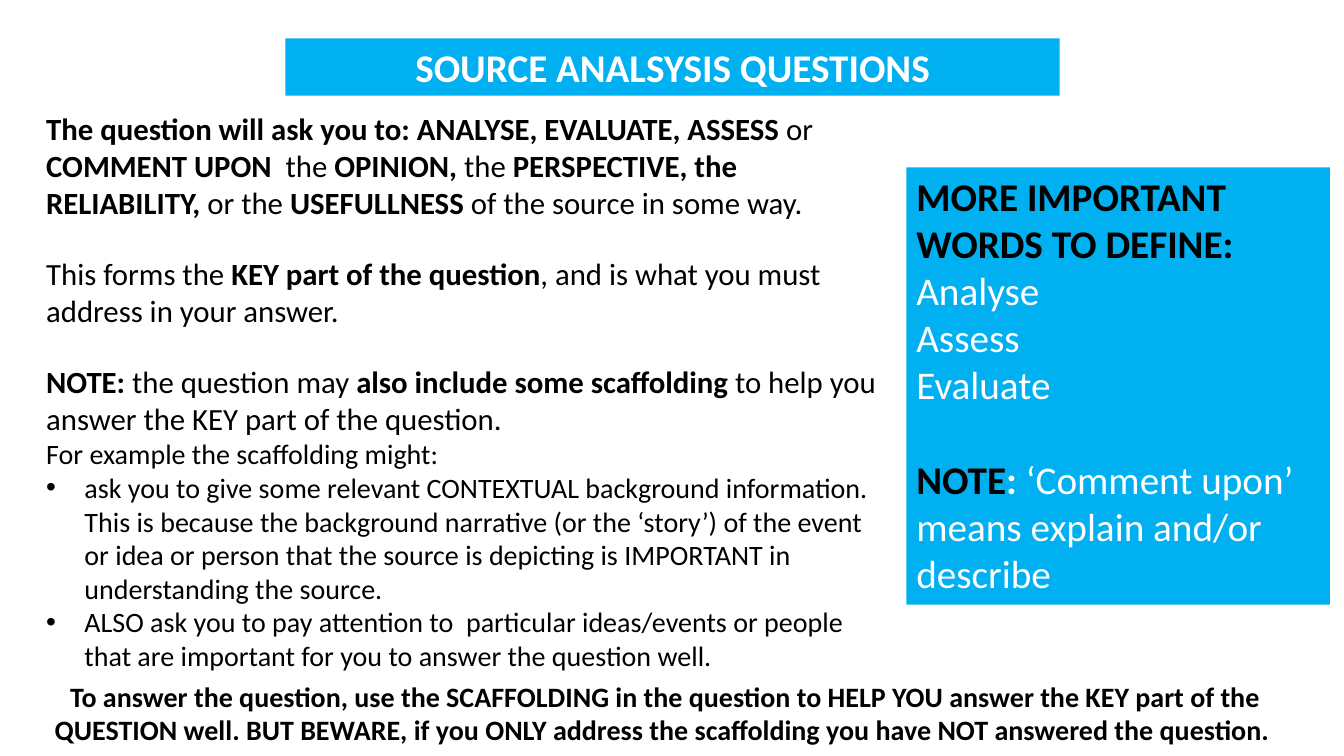
"""Build the slide on source analysis questions."""
from pptx import Presentation
from pptx.dml.color import RGBColor
from pptx.enum.shapes import MSO_SHAPE
from pptx.enum.text import MSO_ANCHOR, MSO_AUTO_SIZE, PP_ALIGN
from pptx.oxml.xmlchemy import OxmlElement
from pptx.util import Inches, Pt

RECTANGLE = MSO_SHAPE.RECTANGLE
TOP, LEFT, CENTER = MSO_ANCHOR.TOP, PP_ALIGN.LEFT, PP_ALIGN.CENTER
NO_AUTOFIT = MSO_AUTO_SIZE.NONE

THEME = {
    "font": "Calibri",
    "panel": RGBColor(0x00, 0xB0, 0xF0),
    "ink": RGBColor(0x00, 0x00, 0x00),
    "white": RGBColor(0xFF, 0xFF, 0xFF),
    "heading": 28,
    "body": 22,
    "detail": 20,
    "line": 1.22,
}
STYLES = {
    "plain": {"bold": False, "color": THEME["ink"]},
    "strong": {"bold": True, "color": THEME["ink"]},
    "light": {"bold": False, "color": THEME["white"]},
    "light strong": {"bold": True, "color": THEME["white"]},
}

TITLE = [{"runs": [("SOURCE ANALSYSIS QUESTIONS", "light strong")],
          "size": "heading", "align": CENTER}]
GUIDANCE = [
    {"size": "body", "runs": [
        ("The question will ask you to: ANALYSE, EVALUATE, ASSESS ", "strong"),
        ("or ", "plain"),
        ("COMMENT UPON ", "strong"),
        (" the ", "plain"),
        ("OPINION, ", "strong"),
        ("the ", "plain"),
        ("PERSPECTIVE, the RELIABILITY, ", "strong"),
        ("or the ", "plain"),
        ("USEFULLNESS", "strong"),
        (" of the source in some way.", "plain")]},
    {"size": "body", "gap": "detail", "runs": [
        ("This forms the ", "plain"),
        ("KEY part of the question", "strong"),
        (", and is what you must address in your answer.", "plain")]},
    {"size": "body", "gap": "detail", "runs": [
        ("NOTE: ", "strong"),
        ("the question may ", "plain"),
        ("also include some scaffolding ", "strong"),
        ("to help you answer the KEY part of the question.", "plain")]},
    {"size": "detail", "runs": [("For example the scaffolding might:", "plain")]},
    {"size": "detail", "bullet": "•", "runs": [
        ("ask you to give some relevant CONTEXTUAL background information. "
         "This is because the background narrative (or the ‘story’) of the event "
         "or idea or person that the source is depicting is IMPORTANT in "
         "understanding the source.", "plain")]},
    {"size": "detail", "bullet": "•", "runs": [
        ("ALSO ask you to pay attention to  particular ideas/events or people "
         "that are important for you to answer the question well.", "plain")]},
]
DEFINITIONS = [
    {"size": "heading", "runs": [("MORE IMPORTANT WORDS TO DEFINE:", "strong")]},
    *[{"size": "heading", "runs": [(word, "light")]}
      for word in ("Analyse", "Assess", "Evaluate")],
    {"size": "heading", "gap": "heading", "runs": [
        ("NOTE", "strong"),
        (": ", "light strong"),
        ("‘Comment upon’ means explain and/or describe", "light")]},
]
WARNING = [{"size": "detail", "align": CENTER, "runs": [
    ("To answer the question, use the SCAFFOLDING in the question to HELP YOU "
     "answer the KEY part of the QUESTION well. BUT BEWARE, if you ONLY address "
     "the scaffolding you have NOT answered the question. ", "strong")]}]

BOXES = {
    "title": (2.83, 0.38, 7.68, 0.57),
    "guidance": (0.36, 1.04, 8.5, 5.72),
    "definitions": (8.99, 1.66, 4.2, 4.34),
    "warning": (0, 6.69, 13.2, 0.78),
}
FRAME = {
    "word_wrap": True, "auto_size": NO_AUTOFIT, "vertical_anchor": TOP,
    "margin_left": Inches(0.1), "margin_right": Inches(0.1),
    "margin_top": Inches(0.05), "margin_bottom": Inches(0.05),
}


def apply(target, values):
    """Set each named attribute on the target."""
    for name, value in values.items():
        setattr(target, name, value)


def add_bullet(paragraph, symbol):
    """Give the paragraph a hanging bullet."""
    properties = paragraph._p.get_or_add_pPr()
    properties.set("marL", str(Inches(0.38)))
    properties.set("indent", str(Inches(-0.38)))
    for tag, name, value in (("a:buFont", "typeface", "Arial"),
                             ("a:buChar", "char", symbol)):
        mark = OxmlElement(tag)
        mark.set(name, value)
        properties.append(mark)


def write(frame, content):
    """Fill a text frame with styled paragraphs."""
    apply(frame, FRAME)
    for index, entry in enumerate(content):
        paragraph = frame.add_paragraph() if index else frame.paragraphs[0]
        gap = THEME[entry["gap"]] * THEME["line"] if "gap" in entry else 0
        apply(paragraph, {"alignment": entry.get("align", LEFT),
                          "space_before": Pt(gap)})
        if "bullet" in entry:
            add_bullet(paragraph, entry["bullet"])
        for text, style in entry["runs"]:
            run = paragraph.add_run()
            run.text = text
            apply(run.font, {"name": THEME["font"],
                             "size": Pt(THEME[entry["size"]]),
                             "bold": STYLES[style]["bold"]})
            run.font.color.rgb = STYLES[style]["color"]


def paint(panel):
    """Fill a panel with the theme blue and no outline."""
    panel.fill.solid()
    panel.fill.fore_color.rgb = THEME["panel"]
    panel.line.fill.background()


def main():
    """Compose and save the slide."""
    deck = Presentation()
    apply(deck, {"slide_width": Inches(13.33), "slide_height": Inches(7.5)})
    slide = deck.slides.add_slide(deck.slide_layouts[5])
    places = {name: [Inches(length) for length in box]
              for name, box in BOXES.items()}

    title = slide.shapes.title
    apply(title, dict(zip(("left", "top", "width", "height"), places["title"])))
    guidance = slide.shapes.add_textbox(*places["guidance"])
    definitions = slide.shapes.add_shape(RECTANGLE, *places["definitions"])
    definitions.shadow.inherit = False
    warning = slide.shapes.add_textbox(*places["warning"])

    for panel in (title, definitions):
        paint(panel)
    for part, content in ((title, TITLE), (guidance, GUIDANCE),
                          (definitions, DEFINITIONS), (warning, WARNING)):
        write(part.text_frame, content)
    deck.save("out.pptx")


if __name__ == "__main__":
    main()
